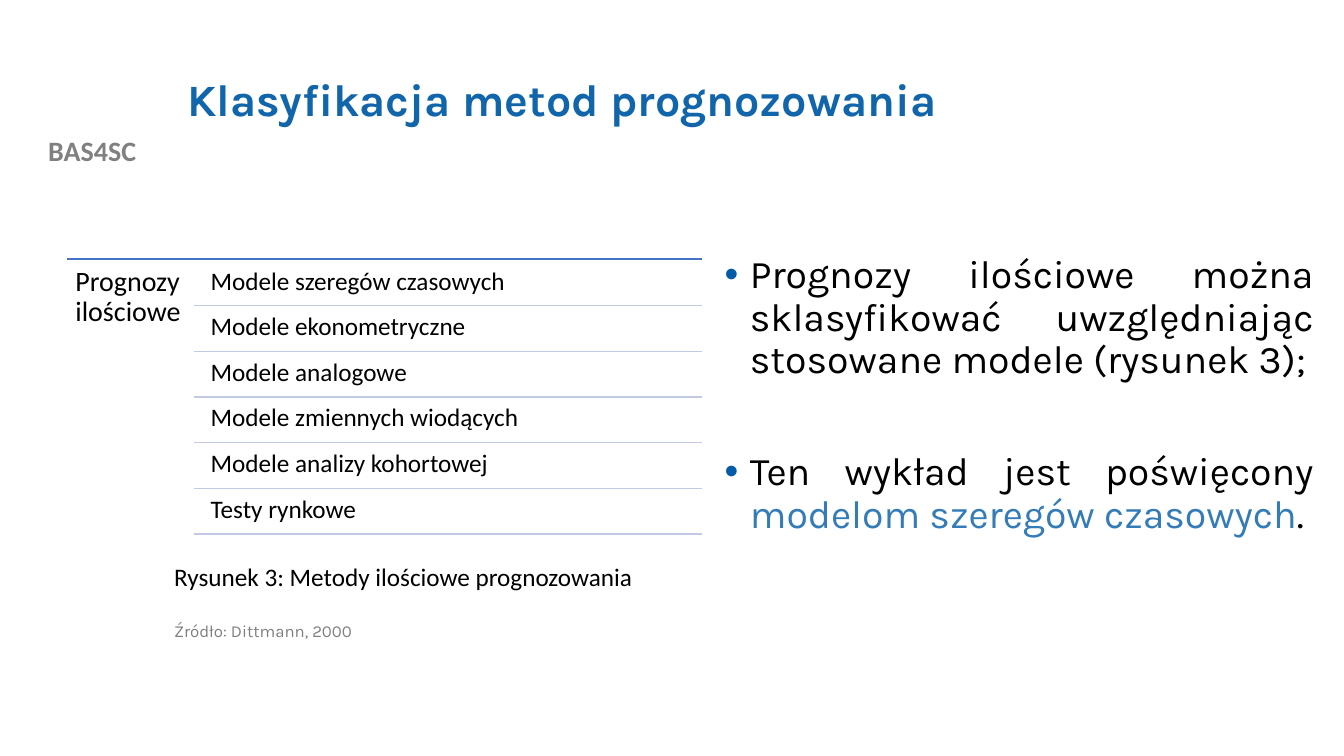
from lxml import etree
from pptx import Presentation
from pptx import util as u
from pptx.dml.color import RGBColor
from pptx.enum import shapes, text
from pptx.oxml import ns

COLORS = {
    "title": "1065AB",
    "label": "808080",
    "source": "7F7F7F",
    "text": "000000",
    "accent": "347CB8",
    "bullet": "015BA6",
    "top_line": "4472C4",
    "row_line": "C1C9E4",
}
MODELS = [
    "Modele szeregów czasowych",
    "Modele ekonometryczne",
    "Modele analogowe",
    "Modele zmiennych wiodących",
    "Modele analizy kohortowej",
    "Testy rynkowe",
]
BULLETS = [
    [("Prognozy ilościowe można sklasyfikować uwzględniając "
      "stosowane modele (rysunek 3);", "text")],
    [("Ten wykład jest poświęcony ", "text"),
     ("modelom szeregów czasowych", "accent"),
     (".", "text")],
]


def add_run(p, words, size, color, font="Calibri", bold=False):
    r = p.add_run()
    r.text = words
    r.font.name = font
    r.font.size = u.Pt(size)
    r.font.bold = bold
    r.font.color.rgb = RGBColor.from_string(COLORS[color])


def add_box(s, left, top, width, height, inset=None):
    sp = s.shapes.add_textbox(u.Cm(left), u.Cm(top), u.Cm(width), u.Cm(height))
    tf = sp.text_frame
    tf.word_wrap = True
    if inset is not None:
        tf.margin_left = tf.margin_right = u.Cm(inset)
        tf.margin_top = tf.margin_bottom = u.Cm(inset)
    return tf


def add_text(s, box, words, size, color, font="Calibri", bold=False,
             inset=None, spacing=None, align=text.PP_ALIGN.LEFT):
    p = add_box(s, *box, inset=inset).paragraphs[0]
    p.alignment = align
    p.line_spacing = spacing
    add_run(p, words, size, color, font, bold)


def add_rule(s, left, right, y, color):
    line = s.shapes.add_connector(
        shapes.MSO_CONNECTOR.STRAIGHT, u.Cm(left), u.Cm(y), u.Cm(right), u.Cm(y))
    line.line.color.rgb = RGBColor.from_string(COLORS[color])
    line.line.width = u.Pt(1)
    etree.SubElement(line._element.spPr, ns.qn("a:effectLst"))


def add_bullet(p):
    pPr = p._p.get_or_add_pPr()
    pPr.set("marL", str(u.Cm(0.64)))
    pPr.set("indent", str(u.Cm(-0.64)))
    clr = etree.SubElement(pPr, ns.qn("a:buClr"))
    etree.SubElement(clr, ns.qn("a:srgbClr"), val=COLORS["bullet"])
    etree.SubElement(pPr, ns.qn("a:buFont"), typeface="Arial")
    etree.SubElement(pPr, ns.qn("a:buChar"), char="•")


def build_title(s, left, top, width, height):
    sp = s.shapes.title
    sp.left, sp.top = u.Cm(left), u.Cm(top)
    sp.width, sp.height = u.Cm(width), u.Cm(height)
    tf = sp.text_frame
    tf.auto_size = text.MSO_AUTO_SIZE.NONE
    tf.vertical_anchor = text.MSO_ANCHOR.MIDDLE
    p = tf.paragraphs[0]
    p.alignment = text.PP_ALIGN.LEFT
    p.line_spacing = 0.9
    add_run(p, "Klasyfikacja metod prognozowania", 32, "title", "Karla", True)


def build_diagram(s, left, top, width):
    label_width, pitch, gap = 3.2, 1.15, 0.05
    right = left + width
    rows_left = left + label_width
    text_left = rows_left + 0.23
    add_rule(s, left, right, top, "top_line")
    add_text(s, (left, top, label_width, pitch * len(MODELS)),
             "Prognozy ilościowe", 20, "text", inset=0.2, spacing=0.9)
    for i, model in enumerate(MODELS):
        y = top + gap + i * pitch
        add_text(s, (text_left, y, right - text_left, pitch - gap),
                 model, 18, "text", inset=0.18, spacing=0.9)
        add_rule(s, rows_left, right, y + pitch - gap / 2, "row_line")


def build_caption(s, left, top):
    add_text(s, (left, top, 13.18, 1.02),
             "Rysunek 3: Metody ilościowe prognozowania", 18, "text")
    add_text(s, (left, top + 1.55, 16.94, 0.71),
             "Źródło: Dittmann, 2000", 12, "source", "Karla", spacing=0.9)


def build_body(s, left, top, width, height):
    tf = add_box(s, left, top, width, height)
    for i, parts in enumerate(BULLETS):
        p = tf.add_paragraph() if i else tf.paragraphs[0]
        add_bullet(p)
        p.alignment = text.PP_ALIGN.JUSTIFY
        p.line_spacing = 0.9
        p.space_before = u.Pt(50 if i else 0)
        for words, color in parts:
            add_run(p, words, 28, color, "Karla")


def main():
    prs = Presentation()
    prs.slide_width, prs.slide_height = u.Cm(33.87), u.Cm(19.05)
    s = prs.slides.add_slide(prs.slide_layouts[5])
    add_text(s, (0, 3.25, 4.65, 1.12), "BAS4SC", 20, "label", bold=True,
             align=text.PP_ALIGN.CENTER)
    build_title(s, 4.47, 1.02, 27.08, 3.1)
    build_body(s, 18.01, 6.3, 15.34, 9.27)
    build_caption(s, 4.14, 14.02)
    build_diagram(s, 1.7, 6.53, 16)
    prs.save("out.pptx")


if __name__ == "__main__":
    main()
